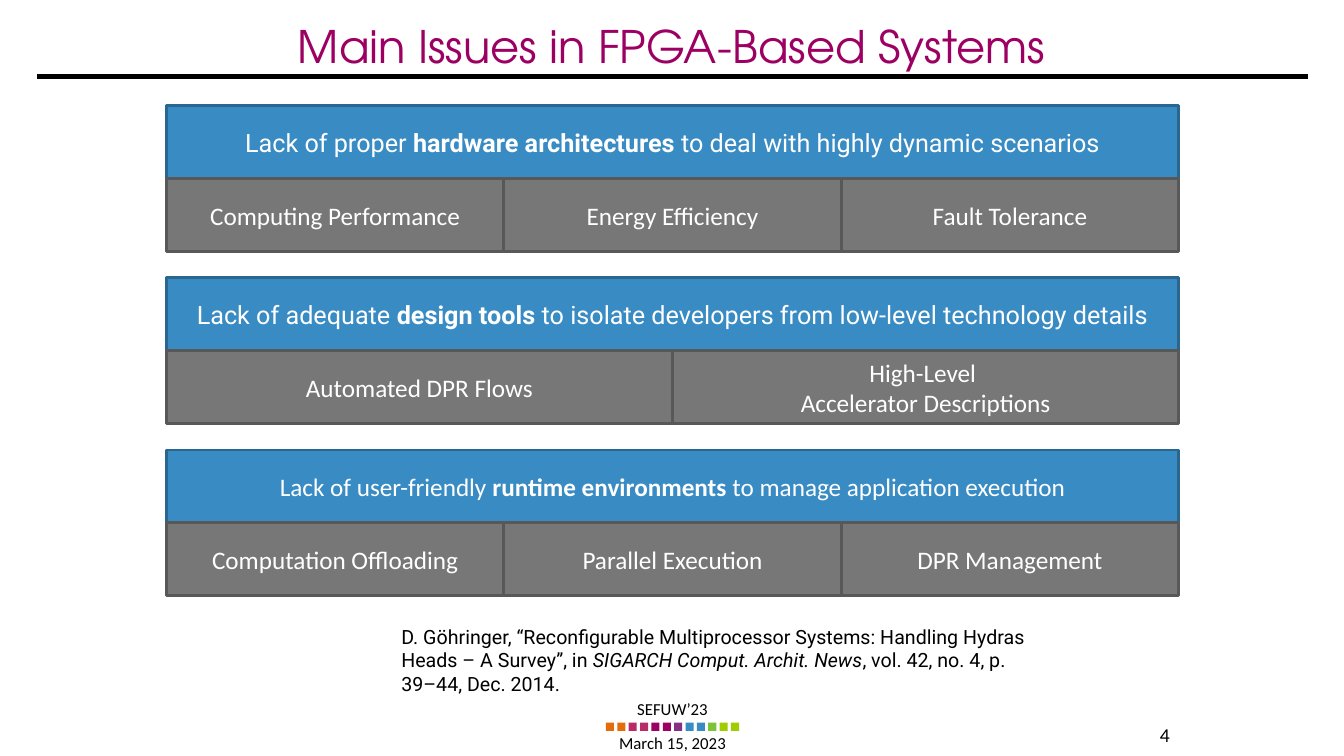
from dataclasses import dataclass

from lxml import etree
from pptx import Presentation
from pptx import util as u
from pptx.dml.color import RGBColor
from pptx.enum import shapes, text
from pptx.oxml.ns import qn


@dataclass(frozen=True)
class Theme:
    black: str = "000000"
    white: str = "FFFFFF"
    plum: str = "9C0063"
    blue: str = "398BC3"
    blue_edge: str = "2A6790"
    gray: str = "777777"
    gray_edge: str = "585858"
    orange: str = "E46C0B"
    pink: str = "BA2A67"
    purple: str = "843085"
    green: str = "7CC23B"
    lime: str = "A0CD00"
    body: str = "Calibri"
    alternate: str = "Roboto"
    heading: str = "TeX Gyre Adventor"
    title_size: int = 32
    issue_size: int = 18
    note_size: int = 14
    footer_size: int = 12


THEME = Theme()
ALIGN = text.PP_ALIGN
MIDDLE = text.MSO_ANCHOR.MIDDLE

# Each issue: heading font, heading as (words, bold) runs, aspects below it
ISSUES = [
    (THEME.alternate,
     [("Lack of proper ", False), ("hardware architectures ", True),
      ("to deal with highly dynamic scenarios", False)],
     ["Computing Performance", "Energy Efficiency", "Fault Tolerance"]),
    (THEME.alternate,
     [("Lack of adequate ", False), ("design tools ", True),
      ("to isolate developers from low-level technology details", False)],
     ["Automated DPR Flows", "High-Level \nAccelerator Descriptions"]),
    (THEME.body,
     [("Lack of user-friendly ", False), ("runtime environments ", True),
      ("to manage application execution", False)],
     ["Computation Offloading", "Parallel Execution", "DPR Management"]),
]
CITATION = [
    ("D. Göhringer, “Reconfigurable Multiprocessor Systems: "
     "Handling Hydras Heads – A Survey”, in ", False),
    ("SIGARCH Comput. Archit. News", True),
    (", vol. 42, no. 4, p. 39–44, Dec. 2014.", False),
]
STRIPE = ([THEME.orange] * 2 + [THEME.pink] * 2 + [THEME.plum] * 2 + [THEME.purple]
          + [THEME.blue] * 2 + [THEME.green] + [THEME.lime] * 2)


def inches(box):
    return [u.Inches(length) for length in box]


def add_run(paragraph, words, size, font, color, bold=False, italic=False):
    """Add one formatted run; a newline in the words becomes a line break."""
    for number, line in enumerate(words.split("\n")):
        if number:
            paragraph.add_line_break()
        run = paragraph.add_run()
        run.text = line
        run.font.size, run.font.name = u.Pt(size), font
        run.font.bold, run.font.italic = bold, italic
        run.font.color.rgb = RGBColor.from_string(color)


def add_block(slide, box, fill, edge=None):
    block = slide.shapes.add_shape(shapes.MSO_SHAPE.RECTANGLE, *inches(box))
    block.shadow.inherit = False
    block.fill.solid()
    block.fill.fore_color.rgb = RGBColor.from_string(fill)
    if edge:
        block.line.color.rgb = RGBColor.from_string(edge)
        block.line.width = u.Pt(2)
    else:
        block.line.fill.background()
    return block


def center_text(block):
    block.text_frame.word_wrap = True
    block.text_frame.vertical_anchor = MIDDLE
    paragraph = block.text_frame.paragraphs[0]
    paragraph.alignment = ALIGN.CENTER
    return paragraph


def add_caption(slide, box, words, size, align=ALIGN.CENTER, wrap=False, inset=0):
    caption = slide.shapes.add_textbox(*inches(box)).text_frame
    caption.word_wrap = wrap
    caption.vertical_anchor = MIDDLE
    caption.margin_left = caption.margin_right = u.Inches(inset)
    caption.margin_top = caption.margin_bottom = u.Inches(inset / 2)
    caption.paragraphs[0].alignment = align
    add_run(caption.paragraphs[0], words, size, THEME.body, THEME.black)


def add_title(slide, box, words):
    title = slide.shapes.title
    title.left, title.top, title.width, title.height = inches(box)
    title.text_frame.auto_size = text.MSO_AUTO_SIZE.NONE
    add_run(center_text(title), words, THEME.title_size, THEME.heading, THEME.plum)


def add_title_rule(slide, left, right, y):
    rule = slide.shapes.add_connector(
        shapes.MSO_CONNECTOR.STRAIGHT, *inches((left, y, right, y)))
    rule.line.color.rgb = RGBColor.from_string(THEME.black)
    rule.line.width = u.Pt(3)
    etree.SubElement(rule._element.spPr, qn("a:effectLst"))


def add_issue(slide, box, font, heading, aspects):
    """Blue heading row above a row of equally wide gray aspects."""
    left, top, width, height = box
    row = height / 2
    banner = center_text(
        add_block(slide, (left, top, width, row), THEME.blue, THEME.blue_edge))
    for words, bold in heading:
        add_run(banner, words, THEME.issue_size, font, THEME.white, bold=bold)
    column = width / len(aspects)
    for number, aspect in enumerate(aspects):
        cell = (left + number * column, top + row, column, row)
        paragraph = center_text(add_block(slide, cell, THEME.gray, THEME.gray_edge))
        add_run(paragraph, aspect, THEME.issue_size, THEME.body, THEME.white)


def add_issues(slide, box, gap):
    left, top, width, height = box
    issue_height = (height - gap * (len(ISSUES) - 1)) / len(ISSUES)
    for number, issue in enumerate(ISSUES):
        y = top + number * (issue_height + gap)
        add_issue(slide, (left, y, width, issue_height), *issue)


def add_citation(slide, box):
    frame = slide.shapes.add_textbox(*inches(box)).text_frame
    frame.word_wrap = True
    frame.margin_left = frame.margin_right = u.Inches(0.09)
    for words, italic in CITATION:
        add_run(frame.paragraphs[0], words, THEME.note_size, THEME.alternate,
                THEME.black, italic=italic)


def add_footer(slide, box):
    """Event name, coloured stripe and date, one below the other."""
    left, top, width, height = box
    line, square = 0.2, 0.08
    add_caption(slide, (left, top, width, line), "SEFUW’23", THEME.footer_size)
    pitch = (width - square) / (len(STRIPE) - 1)
    for number, color in enumerate(STRIPE):
        add_block(slide, (left + number * pitch, top + 0.24, square, square), color)
    add_caption(slide, (left, top + height - line, width, line),
                "March 15, 2023", THEME.footer_size)


def build_issues_slide(deck):
    slide = deck.slides.add_slide(deck.slide_layouts[5])
    add_footer(slide, (6.01, 6.93, 1.32, 0.54))
    add_caption(slide, (10.68, 7.12, 1.02, 0.34), "4", THEME.note_size,
                align=ALIGN.RIGHT, wrap=True, inset=0.1)
    add_title_rule(slide, 0.37, 12.97, 0.76)
    add_title(slide, (0.68, 0.13, 11.97, 0.64), "Main Issues in FPGA-Based Systems")
    add_citation(slide, (3.89, 6.15, 6.52, 0.56))
    add_issues(slide, (1.65, 1.05, 10.04, 4.86), gap=0.26)


def main():
    deck = Presentation()
    deck.slide_width, deck.slide_height = inches((13.33, 7.5))
    build_issues_slide(deck)
    deck.save("out.pptx")


if __name__ == "__main__":
    main()
